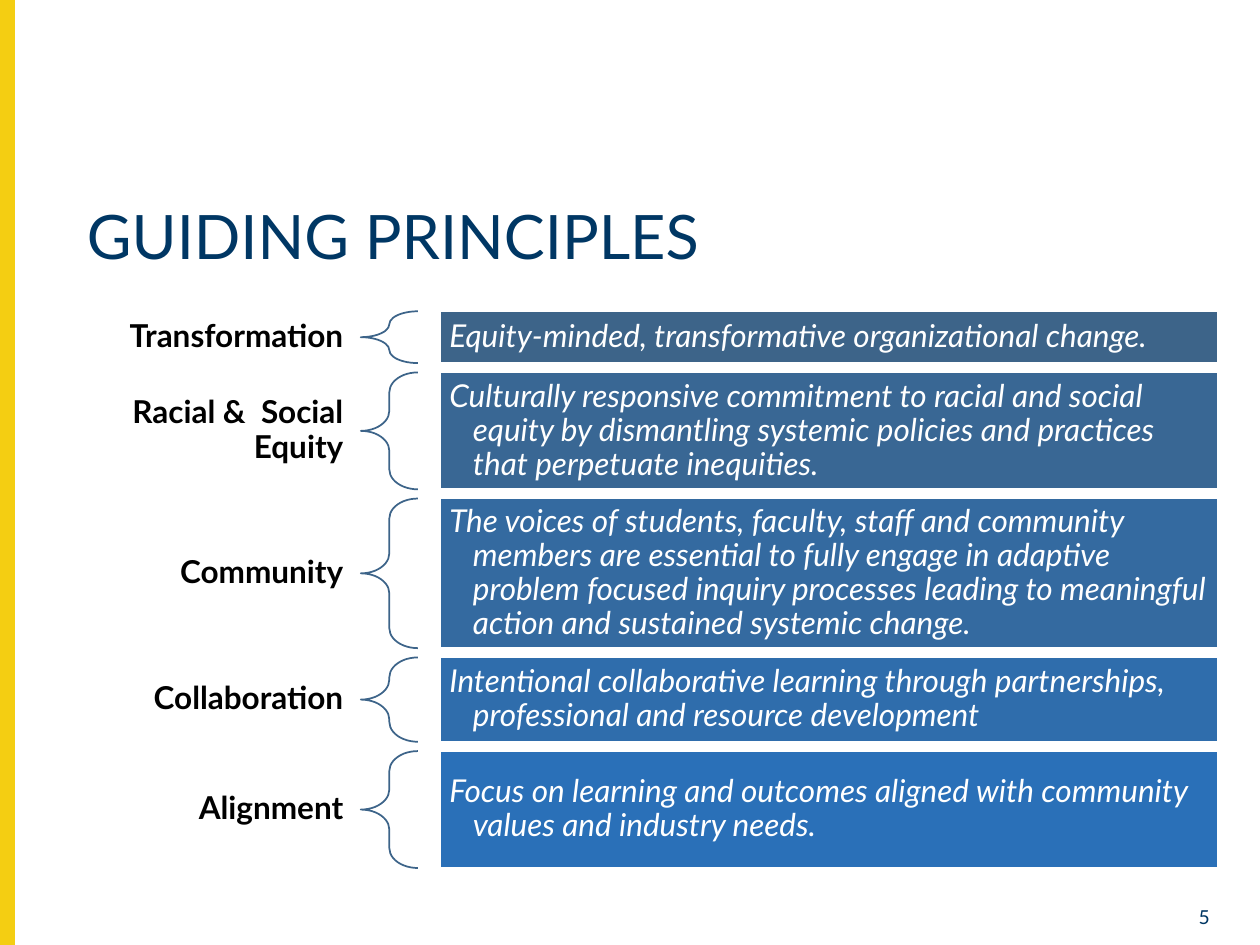
from pptx import Presentation
from pptx.dml.color import RGBColor
from pptx.enum.shapes import MSO_SHAPE as Preset
from pptx.enum.text import MSO_ANCHOR as Anchor, PP_ALIGN as Align
from pptx.util import Pt

FONT = "Lato"
COLORS = {
    "navy": "003764",
    "yellow": "F4CE12",
    "black": "000000",
    "white": "FFFFFF",
    "brace": "3D6489",
}

TITLE = "GUIDING PRINCIPLES"
SLIDE_NUMBER = "5"

# Name, statement, row height, box fill
PRINCIPLES = [
    ("Transformation",
     "Equity-minded, transformative organizational change.",
     29.6, "3D6489"),
    ("Racial &  Social Equity",
     "Culturally responsive commitment to racial and social equity by "
     "dismantling systemic policies and practices that perpetuate inequities.",
     66.8, "396794"),
    ("Community",
     "The voices of students, faculty, staff and community members are "
     "essential to fully engage in adaptive problem focused inquiry processes "
     "leading to meaningful action and sustained systemic change.",
     85.5, "346AA0"),
    ("Collaboration",
     "Intentional collaborative learning through partnerships, \n"
     "professional and resource development",
     48.2, "2F6DAC"),
    ("Alignment",
     "Focus on learning and outcomes aligned with community \n"
     "values and industry needs.",
     66.8, "2A70B8"),
]

ROWS_TOP, ROW_GAP = 177.9, 5.3
LABEL_LEFT, LABEL_WIDTH = 43, 163.2
LABEL_LINE, LABEL_PADDING = 19.8, 8.2
BRACE_LEFT, BRACE_WIDTH = 206.2, 32.6
BOX_LEFT, BOX_WIDTH = 251.8, 444.2
HANGING_INDENT = 13.5


def color(value):
    return RGBColor.from_string(value)


def add_preset(slide, preset, area, fill, line):
    shape = slide.shapes.add_shape(preset, *map(Pt, area))
    shape.shadow.inherit = False
    if fill:
        shape.fill.solid()
        shape.fill.fore_color.rgb = color(fill)
    else:
        shape.fill.background()
    shape.line.color.rgb = color(line)
    shape.line.width = Pt(1)
    return shape


def write(shape, text, size, text_color, insets, align=Align.LEFT,
          anchor=Anchor.TOP, spacing=0.9, bold=False, italic=False):
    """Fill a shape with one paragraph; insets are (horizontal, vertical)."""
    frame = shape.text_frame
    frame.word_wrap = True
    frame.vertical_anchor = anchor
    frame.margin_left = frame.margin_right = Pt(insets[0])
    frame.margin_top = frame.margin_bottom = Pt(insets[1])
    paragraph = frame.paragraphs[0]
    paragraph.text = text
    paragraph.alignment = align
    paragraph.line_spacing = spacing
    font = paragraph.font
    font.name, font.size = FONT, Pt(size)
    font.bold, font.italic = bold, italic
    font.color.rgb = color(text_color)
    return paragraph


def add_principle(slide, top, name, statement, height, fill):
    label_height = LABEL_LINE * (2 if len(name) > 20 else 1) + LABEL_PADDING
    label_top = top + (height - label_height) / 2
    label = slide.shapes.add_textbox(
        *map(Pt, (LABEL_LEFT, label_top, LABEL_WIDTH, label_height)))
    write(label, name, 18, COLORS["black"], (10, 3.6), Align.RIGHT,
          Anchor.MIDDLE, bold=True)

    brace = add_preset(slide, Preset.LEFT_BRACE,
                       (BRACE_LEFT, top, BRACE_WIDTH, height),
                       None, COLORS["brace"])
    brace.adjustments[0] = 0.35
    brace.adjustments[1] = 0.5

    box = add_preset(slide, Preset.RECTANGLE,
                     (BOX_LEFT, top, BOX_WIDTH, height),
                     fill, COLORS["white"])
    paragraph = write(box, statement, 18, COLORS["white"], (5, 5),
                      anchor=Anchor.MIDDLE, italic=True)
    properties = paragraph._p.get_or_add_pPr()
    properties.set("marL", str(Pt(HANGING_INDENT)))
    properties.set("indent", str(-Pt(HANGING_INDENT)))


def main():
    presentation = Presentation()
    presentation.slide_width, presentation.slide_height = Pt(720), Pt(540)
    slide = presentation.slides.add_slide(presentation.slide_layouts[5])

    add_preset(slide, Preset.RECTANGLE, (0, 0, 8, 540),
               COLORS["yellow"], COLORS["yellow"])

    title = slide.shapes.title
    title.left, title.top = Pt(42.5), Pt(114.5)
    title.width, title.height = Pt(653.5), Pt(62)
    write(title, TITLE, 35, COLORS["navy"], (7.2, 3.6))

    number = slide.shapes.add_textbox(Pt(662.4), Pt(514), Pt(36), Pt(15))
    write(number, SLIDE_NUMBER, 11, COLORS["navy"], (7.2, 3.6),
          Align.RIGHT, spacing=1.0)

    top = ROWS_TOP
    for name, statement, height, fill in PRINCIPLES:
        add_principle(slide, top, name, statement, height, fill)
        top += height + ROW_GAP

    presentation.save("out.pptx")


if __name__ == "__main__":
    main()
